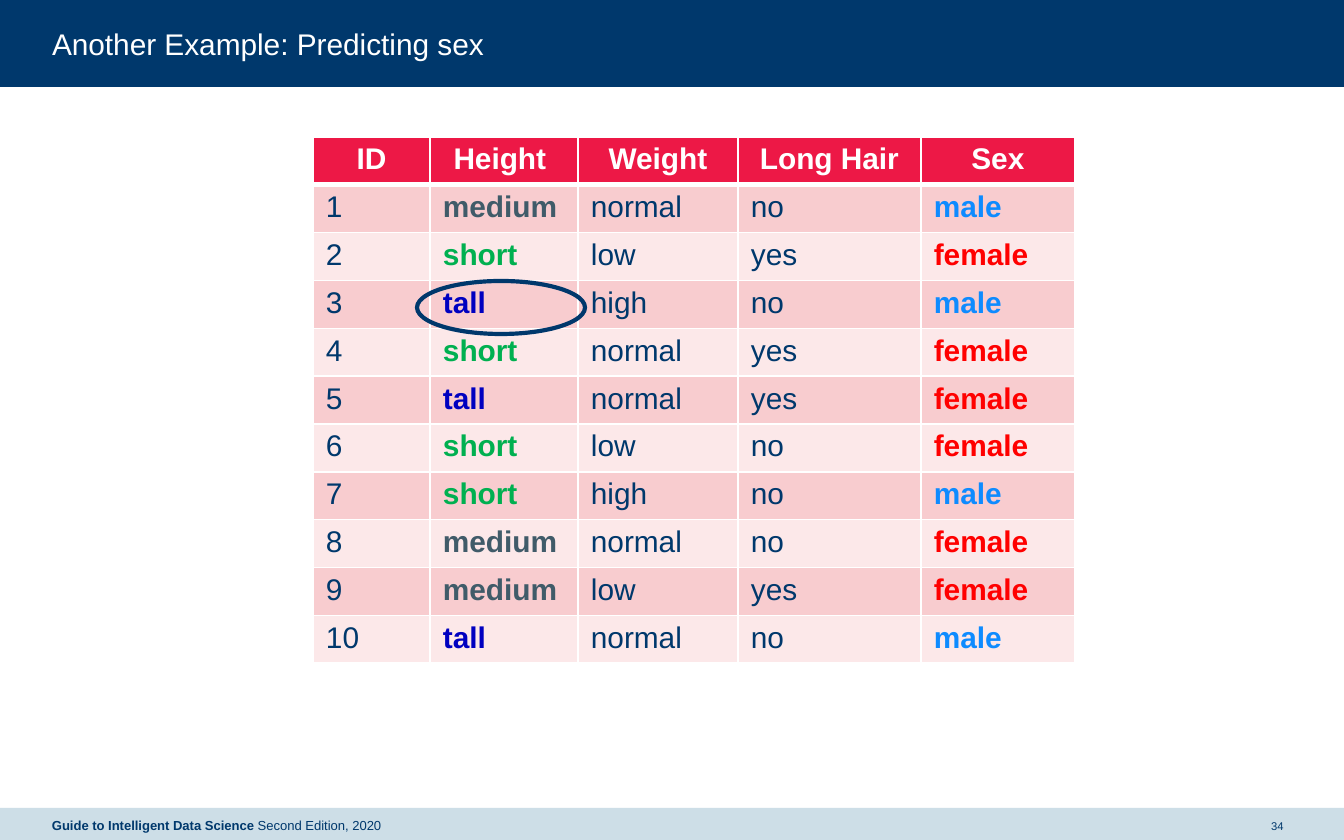
import pptx
import pptx.util
import pptx.dml.color
import pptx.enum.shapes
import pptx.enum.text
import pptx.oxml
import pptx.oxml.ns

# Content
TITLE = "Another Example: Predicting sex"
FOOTER = [("Guide to Intelligent Data Science ", True), ("Second Edition, 2020", False)]
PAGE = "34"
HEADER = ["ID", "Height ", "Weight", "Long Hair", "Sex"]
PEOPLE = [
    ("medium", "normal", "no", "male"),
    ("short", "low", "yes", "female"),
    ("tall", "high", "no", "male"),
    ("short", "normal", "yes", "female"),
    ("tall", "normal", "yes", "female"),
    ("short", "low", "no", "female"),
    ("short", "high", "no", "male"),
    ("medium", "normal", "no", "female"),
    ("medium", "low", "yes", "female"),
    ("tall", "normal", "no", "male"),
]

THEME = {
    "font": "Arial", "text_size": 16, "footer_size": 7, "page_size": 6,
    "navy": "00386C", "pale": "CDDEE7", "white": "FFFFFF",
    "header": "ED1846", "bands": ("F8CCCF", "FCE8E9"),
    "values": {"medium": "405B69", "short": "00B050", "tall": "0000C0",
               "male": "0E8BFF", "female": "FF0000"},
}

# Layout in px
PX = 914400 / 134.4
WIDTH, HEIGHT = 1344, 840
MARGIN = 52
FOOTER_TOP, FOOTER_H = 808, 35
TABLE_LEFT, TABLE_TOP, ROW_H = 313, 137, 46
COLUMNS = [117, 148, 160, 183, 154]
CELL_X, CELL_Y = 13, 6


def px(*lengths):
    return [pptx.util.Emu(round(n * PX)) for n in lengths]


def rgb(color):
    return pptx.dml.color.RGBColor.from_string(color)


def style(r, size, color, bold=False):
    r.font.name = THEME["font"]
    r.font.size = pptx.util.Pt(size)
    r.font.bold = bold
    r.font.color.rgb = rgb(color)


def clear_insets(tf):
    tf.margin_left = tf.margin_top = tf.margin_right = tf.margin_bottom = 0
    tf.word_wrap = True


def add_bar(slide, top, height, color):
    sp = slide.shapes.add_shape(pptx.enum.shapes.MSO_SHAPE.RECTANGLE,
                                *px(0, top, WIDTH, height))
    sp.shadow.inherit = False
    sp.fill.solid()
    sp.fill.fore_color.rgb = rgb(color)
    sp.line.fill.background()
    slide.shapes._spTree.insert(2, sp._element)  # behind the title


def add_footer_text(slide, left, width, runs, size):
    tf = slide.shapes.add_textbox(*px(left, FOOTER_TOP, width, FOOTER_H)).text_frame
    clear_insets(tf)
    tf.vertical_anchor = pptx.enum.text.MSO_ANCHOR.MIDDLE
    p = tf.paragraphs[0]
    for text, bold in runs:
        r = p.add_run()
        r.text = text
        style(r, size, THEME["navy"], bold)
    return p


def set_borders(cell, bottom):
    tcPr = cell._tc.get_or_add_tcPr()
    for side, width in (("L", 1), ("R", 1), ("T", 1), ("B", bottom)):
        tcPr.append(pptx.oxml.parse_xml(
            f'<a:ln{side} {pptx.oxml.ns.nsdecls("a")} w="{width * 12700}"><a:solidFill>'
            f'<a:srgbClr val="{THEME["white"]}"/></a:solidFill></a:ln{side}>'))


def fill_cell(cell, text, row):
    is_header = row == 0
    cell.margin_left, cell.margin_right = px(CELL_X, CELL_X)
    cell.margin_top, cell.margin_bottom = px(CELL_Y, CELL_Y)
    set_borders(cell, 3 if is_header or row == 1 and False else 1)
    cell.fill.solid()
    cell.fill.fore_color.rgb = rgb(THEME["header"] if is_header
                                   else THEME["bands"][(row - 1) % 2])
    cell.text_frame.text = text
    p = cell.text_frame.paragraphs[0]
    if is_header:
        p.alignment = pptx.enum.text.PP_ALIGN.CENTER
        color = THEME["white"]
    else:
        color = THEME["values"].get(text, THEME["navy"])
    style(p.runs[0], THEME["text_size"], color, is_header or text in THEME["values"])


def add_people_table(slide):
    rows = [HEADER] + [(str(i), *person) for i, person in enumerate(PEOPLE, 1)]
    table = slide.shapes.add_table(
        len(rows), len(COLUMNS),
        *px(TABLE_LEFT, TABLE_TOP, sum(COLUMNS), ROW_H * len(rows))).table
    for column, width in zip(table.columns, px(*COLUMNS)):
        column.width = width
    for i, row in enumerate(rows):
        for j, text in enumerate(row):
            fill_cell(table.cell(i, j), text, i)


def main():
    prs = pptx.Presentation()
    prs.slide_width, prs.slide_height = px(WIDTH, HEIGHT)
    slide = prs.slides.add_slide(prs.slide_layouts[5])

    # Title and bars
    add_bar(slide, 0, 87, THEME["navy"])
    add_bar(slide, FOOTER_TOP, HEIGHT - FOOTER_TOP, THEME["pale"])
    title = slide.shapes.title
    title.left, title.top, title.width, title.height = px(MARGIN, 26, WIDTH - 2 * MARGIN, 36)
    tf = title.text_frame
    tf.text = TITLE
    clear_insets(tf)
    tf.vertical_anchor = pptx.enum.text.MSO_ANCHOR.TOP
    tf.paragraphs[0].alignment = pptx.enum.text.PP_ALIGN.LEFT
    style(tf.paragraphs[0].runs[0], THEME["text_size"], THEME["white"])

    # Footer
    add_footer_text(slide, MARGIN, 590, FOOTER, THEME["footer_size"])
    p = add_footer_text(slide, 1264, 27, [(PAGE, False)], THEME["page_size"])
    p.alignment = pptx.enum.text.PP_ALIGN.CENTER

    # Table with the highlighted value
    add_people_table(slide)
    ring = slide.shapes.add_shape(pptx.enum.shapes.MSO_SHAPE.OVAL, *px(417, 281, 168, 53))
    ring.shadow.inherit = False
    ring.fill.background()
    ring.line.color.rgb = rgb(THEME["navy"])
    ring.line.width = pptx.util.Pt(2.25)

    prs.save("out.pptx")


if __name__ == "__main__":
    main()
